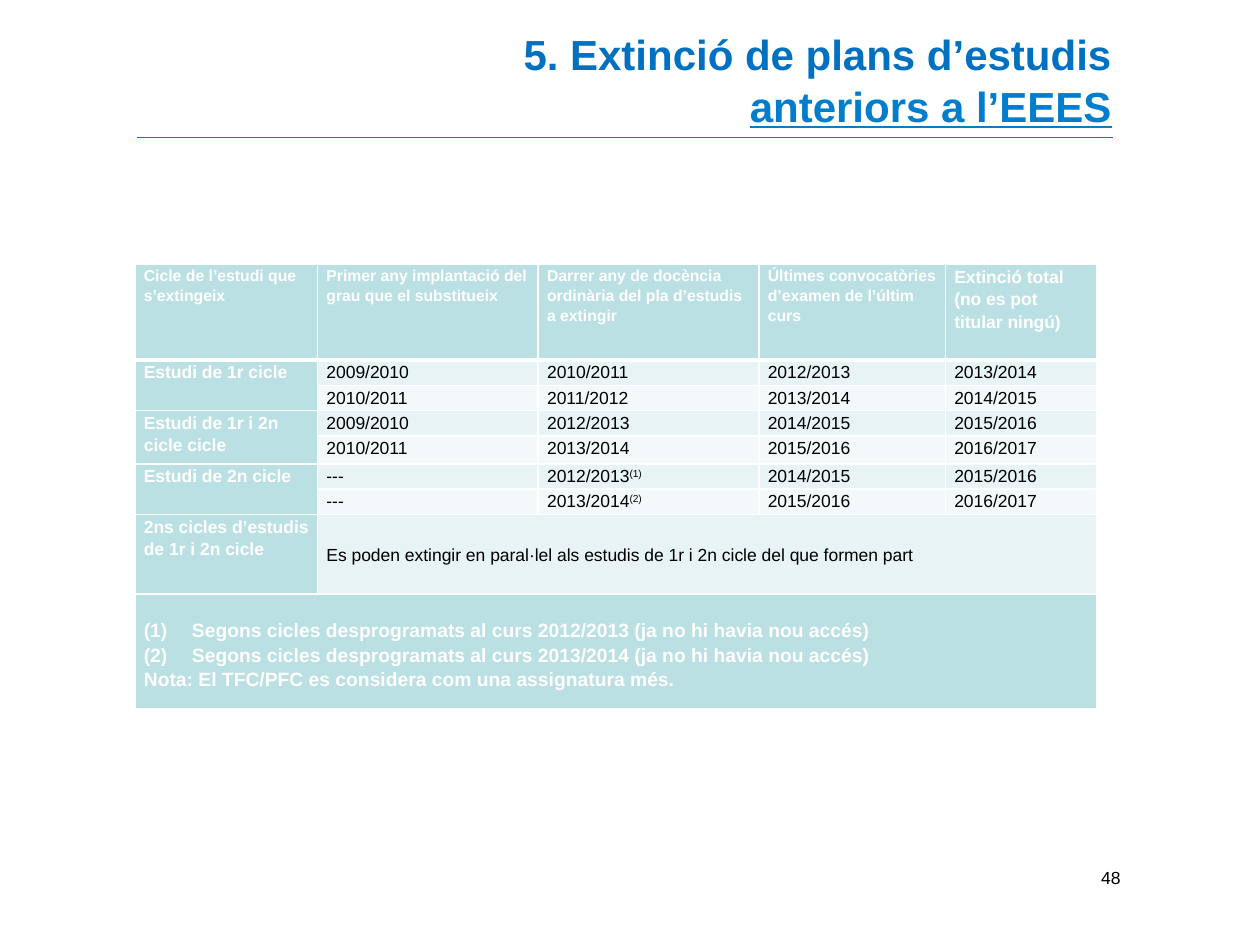
import lxml.etree
import pptx
import pptx.dml.color
import pptx.enum.shapes
import pptx.enum.text
import pptx.oxml.ns
import pptx.util

Cm = pptx.util.Cm
Pt = pptx.util.Pt
RGBColor = pptx.dml.color.RGBColor
ALIGN = pptx.enum.text.PP_ALIGN
ANCHOR = pptx.enum.text.MSO_ANCHOR
qn = pptx.oxml.ns.qn

WHITE = RGBColor(0xFF, 0xFF, 0xFF)
BLACK = RGBColor(0, 0, 0)
TEAL = RGBColor(0xBB, 0xE0, 0xE3)
BAND_DARK = RGBColor(0xE7, 0xF3, 0xF4)
BAND_LIGHT = RGBColor(0xF3, 0xF9, 0xFA)
TITLE_BLUE = RGBColor(0x00, 0x70, 0xC0)
LINK_BLUE = RGBColor(0x00, 0x7D, 0xCC)
RULE_BLUE = RGBColor(0x00, 0x7A, 0xBE)

HEADERS = [
    "Cicle de l’estudi que s’extingeix",
    "Primer any implantació del grau que el substitueix",
    "Darrer any de docència ordinària del pla d’estudis a extingir",
    "Últimes convocatòries d’examen de l’últim curs",
    "Extinció total (no es pot titular ningú)",
]
CYCLES = [
    ("Estudi de 1r cicle", [
        ["2009/2010", "2010/2011", "2012/2013", "2013/2014"],
        ["2010/2011", "2011/2012", "2013/2014", "2014/2015"]]),
    ("Estudi de 1r i 2n cicle cicle", [
        ["2009/2010", "2012/2013", "2014/2015", "2015/2016"],
        ["2010/2011", "2013/2014", "2015/2016", "2016/2017"]]),
    ("Estudi de 2n cicle", [
        ["---", "2012/2013(1)", "2014/2015", "2015/2016"],
        ["---", "2013/2014(2)", "2015/2016", "2016/2017"]]),
]
SECOND_CYCLES = "2ns cicles d’estudis de 1r i 2n cicle"
PARALLEL = "Es poden extingir en paral·lel als estudis de 1r i 2n cicle del que formen part"
NOTES = [
    "Segons cicles desprogramats al curs 2012/2013 (ja no hi havia nou accés)",
    "Segons cicles desprogramats al curs 2013/2014 (ja no hi havia nou accés)",
    "Nota: El TFC/PFC es considera com una assignatura més.",
]
COLUMN_WIDTHS = [3.68, 4.45, 4.45, 3.76, 3.05]
ROW_HEIGHTS = [1.93, 0.51, 0.51, 0.51, 0.56, 0.51, 0.51, 1.6, 2.31]


def style_font(font, size, color, bold=False):
    font.name = "Arial"
    font.size = Pt(size)
    font.color.rgb = color
    font.bold = bold


def set_borders(cell, row):
    tcPr = cell._tc.get_or_add_tcPr()
    for side in "LRTB":
        thick = (row, side) in ((0, "B"), (1, "T"))
        ln = lxml.etree.SubElement(tcPr, qn(f"a:ln{side}"), w=str(Pt(3 if thick else 1)))
        fill = lxml.etree.SubElement(ln, qn("a:solidFill"))
        lxml.etree.SubElement(fill, qn("a:srgbClr"), val=str(WHITE))


def number_paragraph(p):
    pPr = p._p.get_or_add_pPr()
    pPr.set("marL", str(Cm(0.97)))
    pPr.set("indent", str(-Cm(0.97)))
    lxml.etree.SubElement(pPr, qn("a:buFont"), typeface="+mj-lt")
    lxml.etree.SubElement(pPr, qn("a:buAutoNum"), type="arabicParenBoth")


def fill_cell(cell, text, fill, size=10, color=WHITE, bold=True):
    cell.fill.solid()
    cell.fill.fore_color.rgb = fill
    cell.text_frame.text = text
    for p in cell.text_frame.paragraphs:
        p.line_spacing = 1.15
        for r in p.runs:
            style_font(r.font, size, color, bold)


def fill_year(cell, text, fill):
    year, mark, note = text.partition("(")
    fill_cell(cell, year, fill, color=BLACK, bold=False)
    if mark:
        r = cell.text_frame.paragraphs[0].add_run()
        r.text = mark + note
        style_font(r.font, 10, BLACK)
        r._r.get_or_add_rPr().set("baseline", "30000")


def add_extinction_table(slide, left, top, width, height):
    shape = slide.shapes.add_table(len(ROW_HEIGHTS), len(COLUMN_WIDTHS),
                                   Cm(left), Cm(top), Cm(width), Cm(height))
    table = shape.table
    for column, share in zip(table.columns, COLUMN_WIDTHS):
        column.width = Cm(width * share / sum(COLUMN_WIDTHS))
    for row, share in zip(table.rows, ROW_HEIGHTS):
        row.height = Cm(height * share / sum(ROW_HEIGHTS))
    for row_index, row in enumerate(table.rows):
        for cell in row.cells:
            cell.margin_left = cell.margin_right = Cm(0.18)
            cell.margin_top = cell.margin_bottom = 0
            set_borders(cell, row_index)

    for col, header in enumerate(HEADERS):
        fill_cell(table.cell(0, col), header, TEAL, size=10 if col == 4 else 9)

    for index, (cycle, years) in enumerate(CYCLES):
        first = 1 + 2 * index
        table.cell(first, 0).merge(table.cell(first + 1, 0))
        fill_cell(table.cell(first, 0), cycle, TEAL)
        for offset, (values, band) in enumerate(zip(years, (BAND_DARK, BAND_LIGHT))):
            for col, value in enumerate(values, 1):
                fill_year(table.cell(first + offset, col), value, band)

    fill_cell(table.cell(7, 0), SECOND_CYCLES, TEAL)
    table.cell(7, 1).merge(table.cell(7, 4))
    fill_cell(table.cell(7, 1), PARALLEL, BAND_DARK, color=BLACK, bold=False)
    table.cell(7, 1).vertical_anchor = ANCHOR.MIDDLE

    notes = table.cell(8, 0)
    notes.merge(table.cell(8, 4))
    notes.margin_top = Cm(0.47)
    fill_cell(notes, "\n".join(NOTES), TEAL, size=11)
    for p in notes.text_frame.paragraphs[:2]:
        number_paragraph(p)


def add_right_text(slide, left, top, width, height, text):
    box = slide.shapes.add_textbox(Cm(left), Cm(top), Cm(width), Cm(height))
    tf = box.text_frame
    tf.word_wrap = True
    tf.text = text
    for p in tf.paragraphs:
        p.alignment = ALIGN.RIGHT
    return tf


def add_title(slide, left, top, width, height):
    tf = add_right_text(slide, left + 6.17, top, width - 5.94, height,
                        "5. Extinció de plans d’estudis\nanteriors a l’EEES")
    tf.vertical_anchor = ANCHOR.MIDDLE
    first, second = tf.paragraphs
    style_font(first.runs[0].font, 24, TITLE_BLUE, True)
    style_font(second.runs[0].font, 24, LINK_BLUE, True)
    second.runs[0].font.underline = True
    second.space_before = Pt(1)

    bottom = Cm(top + height - 0.03)
    rule = slide.shapes.add_connector(pptx.enum.shapes.MSO_CONNECTOR.STRAIGHT,
                                      Cm(left), bottom, Cm(left + width), bottom)
    rule.line.color.rgb = RULE_BLUE
    rule.line.width = Pt(0.75)
    lxml.etree.SubElement(rule._element.spPr, qn("a:effectLst"))


def add_page_number(slide, left, top, width, height):
    tf = add_right_text(slide, left, top, width, height, "48")
    style_font(tf.paragraphs[0].runs[0].font, 10, BLACK)


def main():
    prs = pptx.Presentation()
    prs.slide_width = Cm(25.4)
    prs.slide_height = Cm(19.05)
    slide = prs.slides.add_slide(prs.slide_layouts[6])
    add_title(slide, 2.77, 0.41, 19.66, 2.39)
    add_extinction_table(slide, 2.72, 5.33, 19.39, 8.95)
    add_page_number(slide, 18.47, 17.35, 4.37, 1.32)
    prs.save("out.pptx")


if __name__ == "__main__":
    main()
